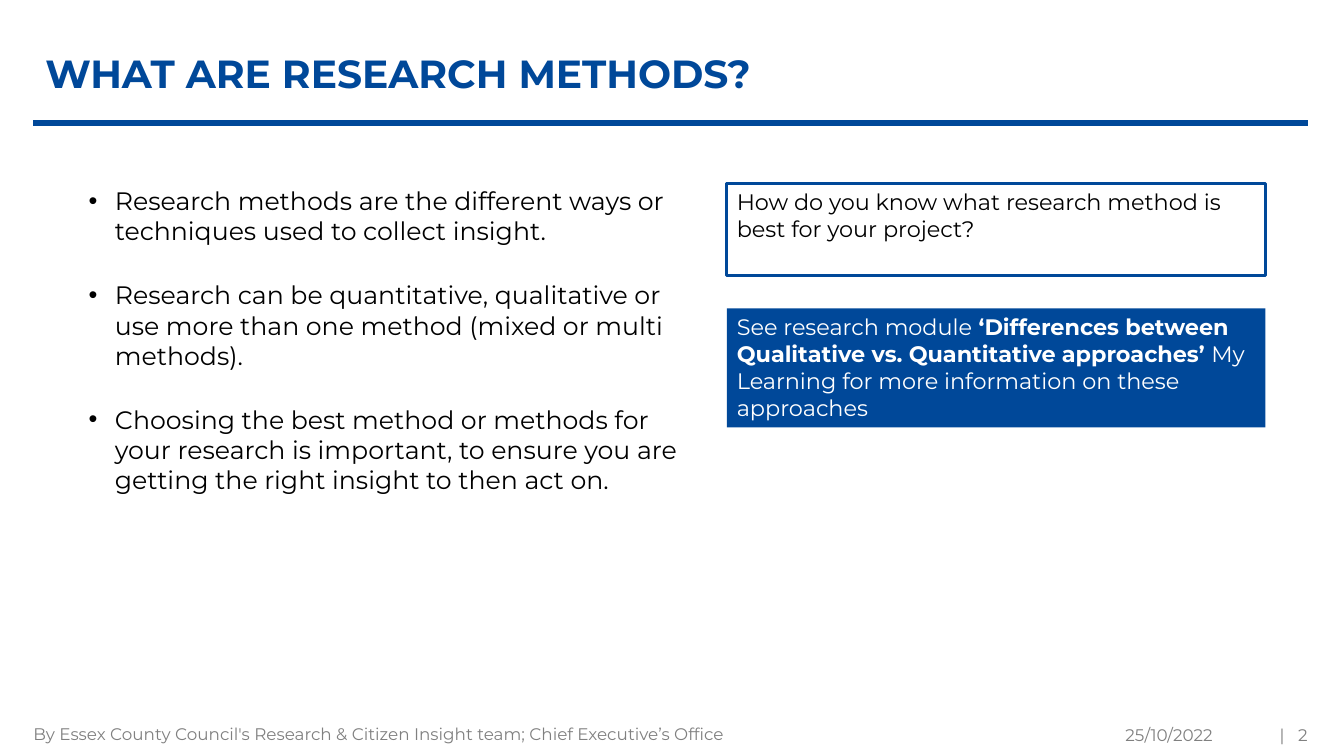
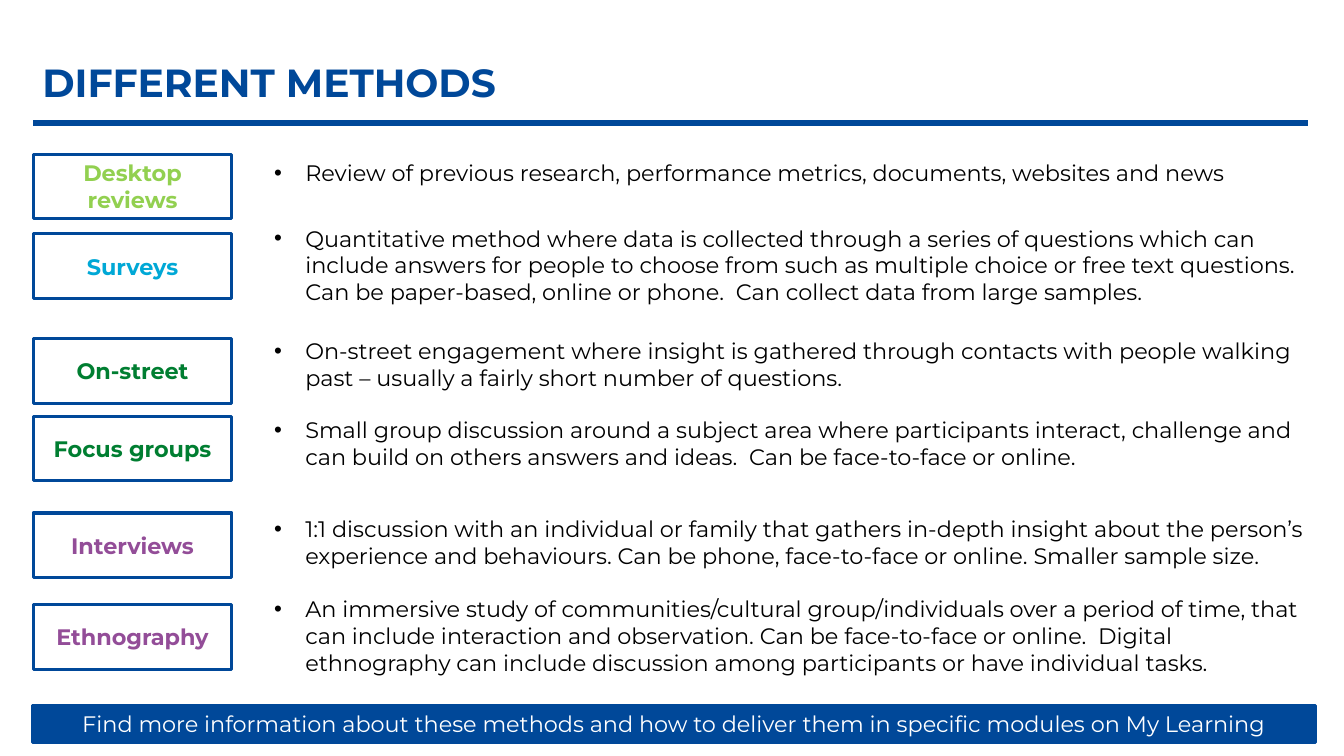
from lxml.etree import SubElement
from pptx import Presentation
from pptx.dml.color import RGBColor
from pptx.enum.shapes import MSO_CONNECTOR, MSO_SHAPE
from pptx.enum.text import MSO_ANCHOR as Anchor, MSO_AUTO_SIZE, PP_ALIGN as Align
from pptx.oxml.ns import qn
from pptx.util import Inches, Pt

# Shared style
FONT = "Montserrat"
BLUE = RGBColor(0x00, 0x48, 0x99)
BLACK = RGBColor(0x00, 0x00, 0x00)
WHITE = RGBColor(0xFF, 0xFF, 0xFF)
GREY = RGBColor(0x80, 0x80, 0x80)
LIME = RGBColor(0x92, 0xD0, 0x50)
CYAN = RGBColor(0x00, 0xA8, 0xD6)
GREEN = RGBColor(0x00, 0x7E, 0x31)
PURPLE = RGBColor(0x93, 0x4D, 0x98)

SLIDE_WIDTH, SLIDE_HEIGHT = 13.33, 7.5
LEFT, RIGHT, RULE_TOP = 0.33, 12.97, 1.22
TITLE_ONLY, TITLE_AND_BODY = 5, 1

# Content of the first slide
INTRO_POINTS = [
    "Research methods are the different ways or techniques used to collect insight.",
    "Research can be quantitative, qualitative or use more than one method "
    "(mixed or multi methods).",
    "Choosing the best method or methods for your research is important, to ensure "
    "you are getting the right insight to then act on.",
]
QUESTION = "How do you know what research method is best for your project?"
SEE_MODULE = [
    ("See research module", False),
    (" ‘Differences between Qualitative vs. Quantitative approaches’ ", True),
    ("My Learning for more information on these approaches", False),
]
# text, left, top, width, height, alignment
FOOTER = [
    ("By Essex County Council's Research & Citizen Insight team; "
     "Chief Executive’s Office", LEFT, 7.13, 8.62, 0.29, Align.LEFT),
    ("25/10/2022", 9.63, 7.21, 2.4, 0.15, Align.RIGHT),
    ("|", 12.24, 7.21, 0.5, 0.15, Align.RIGHT),
    ("2", 12.47, 7.21, 0.5, 0.15, Align.RIGHT),
]

# Content of the second slide: name, colour, label top, text top, text
METHODS = [
    ("Desktop reviews", LIME, 1.53, 1.53,
     "Review of previous research, performance metrics, documents, websites and news"),
    ("Surveys", CYAN, 2.32, 2.18,
     "Quantitative method where data is collected through a series of questions which "
     "can include answers for people to choose from such as multiple choice or free "
     "text questions.  Can be paper-based, online or phone.  Can collect data from "
     "large samples."),
    ("On-street", GREEN, 3.36, 3.3,
     "On-street engagement where insight is gathered through contacts with people "
     "walking past – usually a fairly short number of questions."),
    ("Focus groups", GREEN, 4.13, 4.08,
     "Small group discussion around a subject area where participants interact, "
     "challenge and can build on others answers and ideas.  Can be face-to-face or "
     "online."),
    ("Interviews", PURPLE, 5.09, 5.06,
     "1:1 discussion with an individual or family that gathers in-depth insight about "
     "the person’s experience and behaviours. Can be phone, face-to-face or online. "
     "Smaller sample size."),
    ("Ethnography", PURPLE, 6, 5.86,
     "An immersive study of communities/cultural group/individuals over a period of "
     "time, that can include interaction and observation. Can be face-to-face or "
     "online.  Digital ethnography can include discussion among participants or have "
     "individual tasks."),
]
MORE_INFO = ("Find more information about these methods and how to deliver them "
             "in specific modules on My Learning")


def add_bullet(paragraph, indent):
    properties = paragraph._p.get_or_add_pPr()
    properties.set("marL", str(Inches(indent)))
    properties.set("indent", str(-Inches(indent)))
    SubElement(properties, qn("a:buFont")).set("typeface", "Arial")
    SubElement(properties, qn("a:buChar")).set("char", "•")


def write(shape, paragraphs, size=16, color=BLACK, bold=False, align=Align.LEFT,
          anchor=Anchor.TOP, margins=(0.1, 0.05, 0.1, 0.05), bullet=0, gap=0, spacing=1.0):
    """Fill a shape; a paragraph is a string or a list of (text, bold) runs."""
    frame = shape.text_frame
    frame.word_wrap = True
    frame.auto_size = MSO_AUTO_SIZE.NONE
    frame.vertical_anchor = anchor
    (frame.margin_left, frame.margin_top,
     frame.margin_right, frame.margin_bottom) = map(Inches, margins)
    for index, content in enumerate(paragraphs):
        paragraph = frame.add_paragraph() if index else frame.paragraphs[0]
        paragraph.alignment = align
        paragraph.line_spacing = spacing
        paragraph.space_before = Pt(gap if index else 0)
        if bullet:
            add_bullet(paragraph, bullet)
        runs = [(content, bold)] if isinstance(content, str) else content
        for text, run_bold in runs:
            run = paragraph.add_run()
            run.text = text
            run.font.name, run.font.size, run.font.bold = FONT, Pt(size), run_bold
            run.font.color.rgb = color


def place(shape, left, top, width, height):
    shape.left, shape.top = Inches(left), Inches(top)
    shape.width, shape.height = Inches(width), Inches(height)


def add_text(slide, box, text, **style):
    write(slide.shapes.add_textbox(*map(Inches, box)), [text], **style)


def add_box(slide, box, text, fill=None, outline=True, **style):
    shape = slide.shapes.add_shape(MSO_SHAPE.RECTANGLE, *map(Inches, box))
    shape.shadow.inherit = False
    if fill is None:
        shape.fill.background()
    else:
        shape.fill.solid()
        shape.fill.fore_color.rgb = fill
    if outline:
        shape.line.color.rgb = BLUE
        shape.line.width = Pt(2.25)
    else:
        shape.line.fill.background()
    write(shape, [text], **style)


def add_titled_slide(presentation, layout, title, title_box):
    slide = presentation.slides.add_slide(presentation.slide_layouts[layout])
    rule = slide.shapes.add_connector(
        MSO_CONNECTOR.STRAIGHT, *map(Inches, (LEFT, RULE_TOP, RIGHT, RULE_TOP)))
    rule.line.color.rgb = BLUE
    rule.line.width = Pt(4.5)
    SubElement(rule._element.spPr, qn("a:effectLst"))
    place(slide.shapes.title, *title_box)
    write(slide.shapes.title, [title], size=28, color=BLUE, bold=True,
          anchor=Anchor.BOTTOM, margins=(0.1, 0.05, 0.1, 0), spacing=0.9)
    return slide


def build_intro(presentation):
    slide = add_titled_slide(presentation, TITLE_AND_BODY, "WHAT ARE RESEARCH METHODS?",
                             (0.35, 0.06, 12.63, 0.9))
    body = slide.placeholders[1]
    place(body, 0.78, 1.79, 6.3, 3.15)
    write(body, INTRO_POINTS, size=18, bullet=0.26, gap=24)

    # Side boxes
    side_left, side_width = 7.21, 5.34
    add_box(slide, (side_left, 1.82, side_width, 0.91), QUESTION)
    add_box(slide, (side_left, 3.06, side_width, 1.18), SEE_MODULE,
            fill=BLUE, outline=False, color=WHITE)

    # Footer
    for text, left, top, width, height, align in FOOTER:
        add_text(slide, (left, top, width, height), text, size=12, color=GREY,
                 align=align, anchor=Anchor.MIDDLE, margins=(0, 0.05, 0, 0.05))


def build_methods(presentation):
    slide = add_titled_slide(presentation, TITLE_ONLY, "DIFFERENT METHODS",
                             (0.32, 0.41, 13.01, 0.64))
    for name, color, label_top, text_top, text in METHODS:
        add_box(slide, (LEFT, label_top, 1.97, 0.64), name, color=color, bold=True,
                align=Align.CENTER, anchor=Anchor.MIDDLE)
        add_text(slide, (2.62, text_top, 10.44, 0.64), text, bullet=0.31)
    add_box(slide, (0.32, 7, 12.73, 0.37), MORE_INFO, fill=BLUE, color=WHITE,
            align=Align.CENTER)


def main():
    presentation = Presentation()
    presentation.slide_width = Inches(SLIDE_WIDTH)
    presentation.slide_height = Inches(SLIDE_HEIGHT)
    build_intro(presentation)
    build_methods(presentation)
    presentation.save("out.pptx")


if __name__ == "__main__":
    main()
